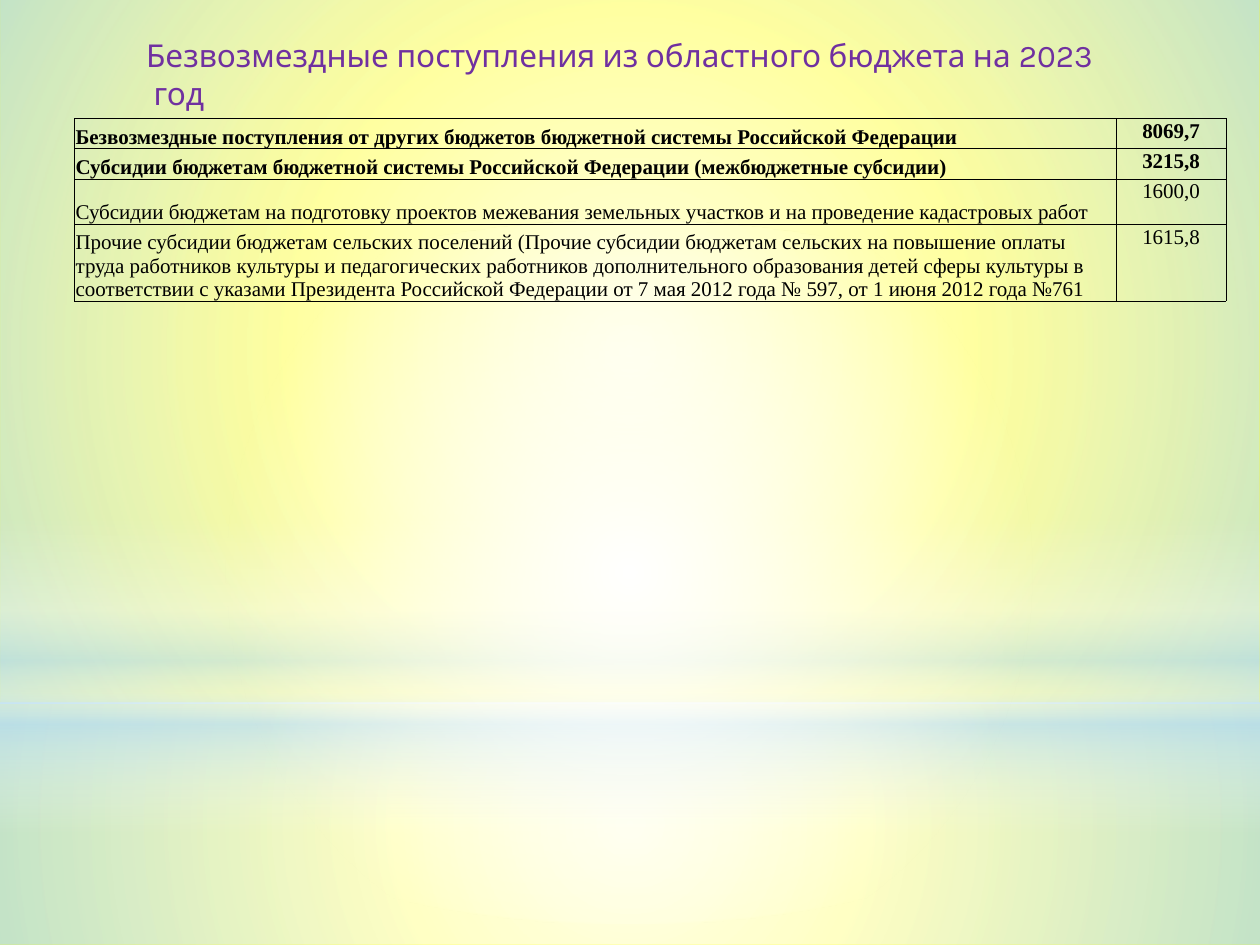
from lxml import etree
from pptx import Presentation
from pptx import util as u
from pptx.dml.color import RGBColor
from pptx.enum import shapes, text
from pptx.oxml import parse_xml
from pptx.oxml.ns import nsdecls, qn

YELLOW = RGBColor(0xFF, 0xFF, 0x00)
WHITE = RGBColor(0xFF, 0xFF, 0xFF)
SKY = RGBColor(0xB4, 0xDC, 0xFA)
PURPLE = RGBColor(0x70, 0x30, 0xA0)
BLACK = RGBColor(0x00, 0x00, 0x00)

RADIAL = ('<a:path path="circle"><a:fillToRect l="50000" t="50000" '
          'r="50000" b="50000"/></a:path>')
VERTICAL = '<a:lin ang="5400000" scaled="0"/>'
RECT = shapes.MSO_SHAPE.RECTANGLE
OVAL = shapes.MSO_SHAPE.OVAL

TITLE = ["Безвозмездные поступления из областного бюджета на 2023", " год"]
ROWS = [
    ("Безвозмездные поступления от других бюджетов бюджетной системы "
     "Российской Федерации", "8069,7", True, 0.24),
    ("Субсидии бюджетам бюджетной системы Российской Федерации "
     "(межбюджетные субсидии)", "3215,8", True, 0.24),
    ("Субсидии бюджетам на подготовку проектов межевания земельных участков "
     "и на проведение кадастровых работ", "1600,0", False, 0.36),
    ("Прочие субсидии бюджетам сельских поселений (Прочие субсидии бюджетам "
     "сельских на повышение оплаты труда работников культуры и педагогических "
     "работников дополнительного образования детей сферы культуры в "
     "соответствии с указами Президента Российской Федерации от 7 мая 2012 "
     "года № 597, от 1 июня 2012 года №761", "1615,8", False, 0.61),
]


def write(p, words, font, size, color, bold=False, align=text.PP_ALIGN.LEFT):
    """Add one formatted run to a paragraph."""
    p.alignment = align
    r = p.add_run()
    r.text = words
    r.font.name, r.font.size, r.font.bold = font, u.Pt(size), bold
    r.font.color.rgb = color


def set_margins(frame, x, top, bottom):
    """Set the inner margins of a text frame or cell in inches."""
    frame.margin_left = frame.margin_right = u.Inches(x)
    frame.margin_top, frame.margin_bottom = u.Inches(top), u.Inches(bottom)


def add_glow(s, kind, x, y, w, h, stops, direction):
    """Add a borderless shape filled with a translucent gradient."""
    sp = s.shapes.add_shape(kind, *map(u.Inches, (x, y, w, h)))
    sp.shadow.inherit = False
    sp.line.fill.background()
    sp.fill.background()
    stop_xml = "".join(
        f'<a:gs pos="{pos * 1000}"><a:srgbClr val="{color}">'
        f'<a:alpha val="{alpha * 1000}"/></a:srgbClr></a:gs>'
        for pos, color, alpha in stops)
    grad = parse_xml(f'<a:gradFill {nsdecls("a")} rotWithShape="1">'
                     f'<a:gsLst>{stop_xml}</a:gsLst>{direction}</a:gradFill>')
    spPr = sp._element.spPr
    spPr.replace(spPr.find(qn("a:noFill")), grad)


def add_backdrop(s, x, y, w, h):
    """Paint the yellow background and its layers of light."""
    s.background.fill.solid()
    s.background.fill.fore_color.rgb = YELLOW
    horizon = 5.58
    add_glow(s, RECT, x, y + horizon, w, h - horizon,
             [(0, WHITE, 91), (37, WHITE, 76), (100, SKY, 79)], RADIAL)
    add_glow(s, RECT, x, y, w, horizon,
             [(0, WHITE, 89), (48, WHITE, 62), (100, SKY, 79)], RADIAL)
    add_glow(s, RECT, x, y + 4.12, w, 2.5,
             [(0, WHITE, 0), (29, WHITE, 30), (45, SKY, 40),
              (55, WHITE, 26), (65, SKY, 60), (100, WHITE, 0)], VERTICAL)
    add_glow(s, OVAL, x, y + 1.75, w, horizon,
             [(0, WHITE, 100), (56, WHITE, 0)], RADIAL)


def add_title(s, x, y, w, h):
    """Fill the title placeholder and bring it in front of the backdrop."""
    sp = s.shapes.title
    s.shapes._spTree.append(sp._element)
    sp.left, sp.top, sp.width, sp.height = map(u.Inches, (x, y, w, h))
    tf = sp.text_frame
    tf.word_wrap = True
    tf.auto_size = text.MSO_AUTO_SIZE.SHAPE_TO_FIT_TEXT
    tf.vertical_anchor = text.MSO_ANCHOR.MIDDLE
    set_margins(tf, 0.1, 0.05, 0.05)
    for i, words in enumerate(TITLE):
        p = tf.add_paragraph() if i else tf.paragraphs[0]
        p.space_before = u.Pt(0)
        write(p, words, "Karla", 18, PURPLE)


def add_borders(cell):
    """Draw a hairline on every side of a cell."""
    tcPr = cell._tc.get_or_add_tcPr()
    for side in ("lnL", "lnR", "lnT", "lnB"):
        ln = etree.SubElement(tcPr, qn(f"a:{side}"), w=str(u.Pt(0.23)))
        fill = etree.SubElement(ln, qn("a:solidFill"))
        etree.SubElement(fill, qn("a:srgbClr"), val=str(BLACK))


def add_budget_table(s, x, y, w, h):
    """Add the table of receipts with a narrow column of amounts."""
    amount_w = 0.87
    tbl = s.shapes.add_table(len(ROWS), 2, *map(u.Inches, (x, y, w, h))).table
    tbl.first_row = tbl.horz_banding = False
    tbl.columns[0].width = u.Inches(w - amount_w)
    tbl.columns[1].width = u.Inches(amount_w)
    styles = [(text.MSO_ANCHOR.BOTTOM, text.PP_ALIGN.LEFT),
              (text.MSO_ANCHOR.TOP, text.PP_ALIGN.CENTER)]
    for i, (name, amount, bold, row_h) in enumerate(ROWS):
        tbl.rows[i].height = u.Inches(row_h)
        for j, words in enumerate((name, amount)):
            cell = tbl.cell(i, j)
            anchor, align = styles[j]
            add_borders(cell)
            cell.fill.background()
            cell.vertical_anchor = anchor
            set_margins(cell, 0.01, 0.01, 0)
            write(cell.text_frame.paragraphs[0], words, "Times New Roman", 12,
                  BLACK, bold=bold, align=align)


def main():
    """Build and save the slide."""
    prs = Presentation()
    prs.slide_width, prs.slide_height = u.Inches(10), u.Inches(7.5)
    s = prs.slides.add_slide(prs.slide_layouts[5])
    add_backdrop(s, 0, 0, 10, 7.5)
    add_title(s, 1.06, 0.23, 7.95, 0.71)
    add_budget_table(s, 0.59, 0.94, 9.14, sum(row[3] for row in ROWS))
    prs.save("out.pptx")


if __name__ == "__main__":
    main()
